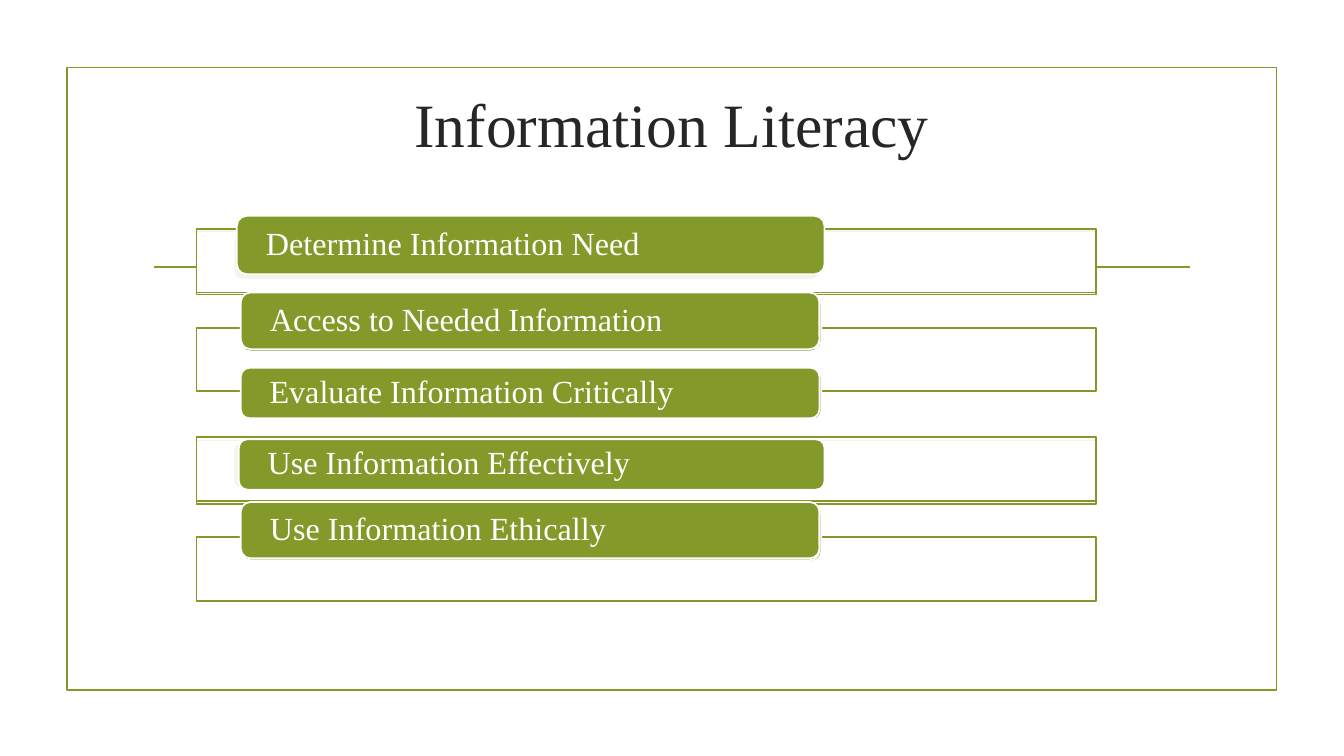
from dataclasses import dataclass

import lxml.etree
import pptx
import pptx.dml.color
import pptx.enum.shapes
import pptx.enum.text
import pptx.oxml.ns
import pptx.util

Cm = pptx.util.Cm
Pt = pptx.util.Pt
qn = pptx.oxml.ns.qn
SHAPE = pptx.enum.shapes.MSO_SHAPE
ALIGN = pptx.enum.text.PP_ALIGN
ANCHOR = pptx.enum.text.MSO_ANCHOR

COLORS = {"green": "83992A", "white": "FFFFFF", "ink": "262626"}
FONT = "Times New Roman"
LINE_WIDTH = Pt(1.25)


@dataclass
class Frame:
    top: float
    left: float = 4.95
    width: float = 22.68
    height: float = 1.6


@dataclass
class Pill:
    left: float
    top: float
    width: float
    height: float
    text: str = ""


LAYERS = [
    Frame(11.1),
    Pill(5.89, 11.13, 14.76, 1.18),
    Frame(13.54),
    Pill(6.12, 12.73, 14.58, 1.42),
    Pill(6.07, 12.7, 14.58, 1.42),
    Frame(11.02),
    Pill(6.02, 11.07, 14.76, 1.27, "Use Information Effectively"),
    Pill(6.07, 12.65, 14.58, 1.42, "Use Information Ethically"),
    Frame(5.82),
    Pill(5.89, 5.87, 14.76, 1.18),
    Frame(8.26),
    Pill(6.12, 7.44, 14.58, 1.42),
    Pill(6.12, 9.3, 14.58, 1.27),
    Pill(6.07, 7.44, 14.58, 1.42),
    Pill(6.07, 9.27, 14.58, 1.27, "Evaluate Information Critically"),
    Frame(5.77),
    Pill(5.97, 5.44, 14.81, 1.47, "Determine Information Need"),
    Pill(6.07, 7.37, 14.58, 1.43, "Access to Needed Information"),
]


def rgb(name: str) -> pptx.dml.color.RGBColor:
    return pptx.dml.color.RGBColor.from_string(COLORS[name])


def add_box(s, kind, box: Frame | Pill, fill: str | None, line: str):
    sp = s.shapes.add_shape(
        kind, Cm(box.left), Cm(box.top), Cm(box.width), Cm(box.height)
    )
    sp.shadow.inherit = False
    if fill:
        sp.fill.solid()
        sp.fill.fore_color.rgb = rgb(fill)
    else:
        sp.fill.background()
    sp.line.color.rgb = rgb(line)
    sp.line.width = LINE_WIDTH
    return sp


def add_text(p, text: str, size: float, color: str) -> None:
    r = p.add_run()
    r.text = text
    r.font.name = FONT
    r.font.size = Pt(size)
    r.font.color.rgb = rgb(color)


def draw_frame(s, frame: Frame) -> None:
    sp = add_box(s, SHAPE.RECTANGLE, frame, "white", "green")
    fill_color = sp.fill._xPr.find(qn("a:solidFill"))[0]
    lxml.etree.SubElement(fill_color, qn("a:alpha")).set("val", "90000")


def draw_pill(s, pill: Pill) -> None:
    sp = add_box(s, SHAPE.ROUNDED_RECTANGLE, pill, "green", "white")
    sp.adjustments[0] = 0.17
    if not pill.text:
        return
    tf = sp.text_frame
    tf.word_wrap = True
    tf.vertical_anchor = ANCHOR.MIDDLE
    tf.margin_left = tf.margin_right = Cm(0.66)
    tf.margin_top = tf.margin_bottom = Cm(0.06)
    p = tf.paragraphs[0]
    p.alignment = ALIGN.LEFT
    p.line_spacing = 0.9
    add_text(p, pill.text, 23, "white")


def draw_title(s, text: str) -> None:
    sp = s.shapes.title
    sp.left, sp.top, sp.width, sp.height = Cm(3.6), Cm(1.56), Cm(26.67), Cm(3.05)
    tf = sp.text_frame
    tf.word_wrap = True
    tf.vertical_anchor = ANCHOR.MIDDLE
    p = tf.paragraphs[0]
    p.alignment = ALIGN.CENTER
    add_text(p, text, 44, "ink")


def draw_rule(s) -> None:
    rule = s.shapes.add_connector(
        pptx.enum.shapes.MSO_CONNECTOR.STRAIGHT, Cm(3.89), Cm(6.73), Cm(30), Cm(6.73)
    )
    rule.line.color.rgb = rgb("green")
    rule.line.width = LINE_WIDTH
    lxml.etree.SubElement(rule._element.spPr, qn("a:effectLst"))


def main() -> None:
    prs = pptx.Presentation()
    prs.slide_width, prs.slide_height = Cm(33.87), Cm(19.05)
    s = prs.slides.add_slide(prs.slide_layouts[5])
    draw_title(s, "Information Literacy")
    add_box(s, SHAPE.RECTANGLE, Frame(1.7, 1.69, 30.48, 15.68), None, "green")
    draw_rule(s)
    for layer in LAYERS:
        if isinstance(layer, Frame):
            draw_frame(s, layer)
        else:
            draw_pill(s, layer)
    prs.save("out.pptx")


if __name__ == "__main__":
    main()
